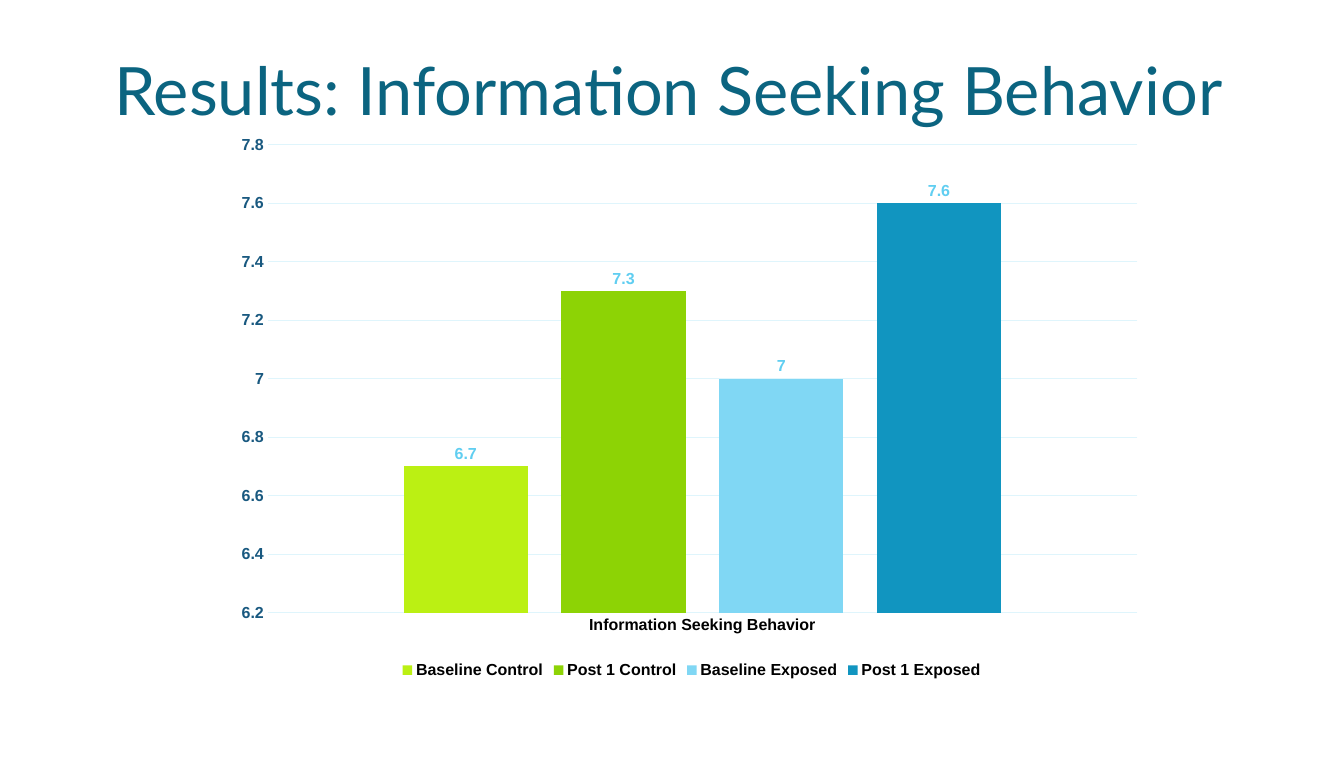
import pptx
import pptx.chart.data
import pptx.dml.color
import pptx.enum.chart
import pptx.enum.text
import pptx.oxml
import pptx.oxml.ns
import pptx.util
from pptx.util import Inches

SCORES = [
    ("Baseline Control", 6.7, "BBF013"),
    ("Post 1 Control", 7.3, "8DD305"),
    ("Baseline Exposed", 7, "80D7F4"),
    ("Post 1 Exposed", 7.6, "1195C0"),
]
PLOT_AREA = {"x": 0.047, "y": 0.015, "w": 0.929, "h": 0.857}
GRID_COLOR = "DFF5FC"


def rgb(color):
    """Return the colour for a hex string."""
    return pptx.dml.color.RGBColor.from_string(color)


def style_font(font, name, size, color, bold=False):
    """Set the typeface, size, colour and weight of a font."""
    font.name = name
    font.size = pptx.util.Pt(size)
    font.color.rgb = rgb(color)
    font.bold = bold


def style_line(line, color):
    """Give a chart line its colour and thin width."""
    line.color.rgb = rgb(color)
    line.width = pptx.util.Pt(0.75)


def add_title(slide, left, top, width, height):
    """Place the centred slide title in its box."""
    frame = slide.shapes.add_textbox(left, top, width, height).text_frame
    frame.word_wrap = True
    frame.vertical_anchor = pptx.enum.text.MSO_ANCHOR.MIDDLE
    frame.margin_left = frame.margin_right = 0
    frame.margin_top = frame.margin_bottom = 0
    heading = frame.paragraphs[0]
    heading.text = "Results: Information Seeking Behavior"
    heading.alignment = pptx.enum.text.PP_ALIGN.CENTER
    heading.line_spacing = 0.93
    style_font(heading.font, "Lato", 50, "0B6480")


def set_plot_layout(chart):
    """Fix the inner plot area as fractions of the chart."""
    plot_area = chart.plots[0]._element.getparent()
    for old_layout in plot_area.findall(pptx.oxml.ns.qn("c:layout")):
        plot_area.remove(old_layout)
    modes = "".join(f'<c:{side}Mode val="edge"/>' for side in "xy")
    extents = "".join(f'<c:{key} val="{value}"/>' for key, value in PLOT_AREA.items())
    plot_area.insert(0, pptx.oxml.parse_xml(
        f'<c:layout {pptx.oxml.ns.nsdecls("c")}><c:manualLayout>'
        f'<c:layoutTarget val="inner"/>{modes}{extents}'
        '</c:manualLayout></c:layout>'))


def style_axes(chart):
    """Style the category axis, the value axis and its gridlines."""
    behavior_axis, score_axis = chart.category_axis, chart.value_axis
    for axis, color in ((behavior_axis, "000000"), (score_axis, "195980")):
        axis.major_tick_mark = pptx.enum.chart.XL_TICK_MARK.NONE
        axis.minor_tick_mark = pptx.enum.chart.XL_TICK_MARK.NONE
        style_font(axis.tick_labels.font, "Arial", 12, color, True)
    style_line(behavior_axis.format.line, GRID_COLOR)
    score_axis.format.line.fill.background()
    score_axis.minimum_scale = 6.2
    score_axis.maximum_scale = 7.8
    score_axis.major_unit = 0.2
    score_axis.has_major_gridlines = True
    style_line(score_axis.major_gridlines.format.line, GRID_COLOR)


def add_scores_chart(slide, left, top, width, height):
    """Place the clustered column chart of behavior scores in its box."""
    scores = pptx.chart.data.CategoryChartData()
    scores.categories = ["Information Seeking Behavior"]
    for group, score, _ in SCORES:
        scores.add_series(group, [score])
    chart = slide.shapes.add_chart(
        pptx.enum.chart.XL_CHART_TYPE.COLUMN_CLUSTERED,
        left, top, width, height, scores).chart
    style_font(chart.font, "Arial", 10, "2BBDEC")
    chart.has_title = False
    chart.has_legend = True
    chart.legend.position = pptx.enum.chart.XL_LEGEND_POSITION.BOTTOM
    chart.legend.include_in_layout = False
    style_font(chart.legend.font, "Arial", 12, "000000", True)
    style_axes(chart)
    set_plot_layout(chart)

    columns = chart.plots[0]
    columns.vary_by_categories = False
    columns.gap_width = 219
    columns.overlap = -27
    for column, (_, _, color) in zip(columns.series, SCORES):
        column.format.fill.solid()
        column.format.fill.fore_color.rgb = rgb(color)
        labels = column.data_labels
        labels.show_value = True
        labels.position = pptx.enum.chart.XL_LABEL_POSITION.OUTSIDE_END
        style_font(labels.font, "Arial", 12, "60CEF1", True)


def main():
    """Build and save the results slide."""
    deck = pptx.Presentation()
    deck.slide_width = Inches(14)
    deck.slide_height = Inches(8)
    slide = deck.slides.add_slide(deck.slide_layouts[6])
    add_scores_chart(slide, Inches(2.33), Inches(1.42), Inches(9.75), Inches(5.69))
    add_title(slide, Inches(0.67), Inches(0.31), Inches(12.59), Inches(1.33))
    deck.save("out.pptx")


if __name__ == "__main__":
    main()
